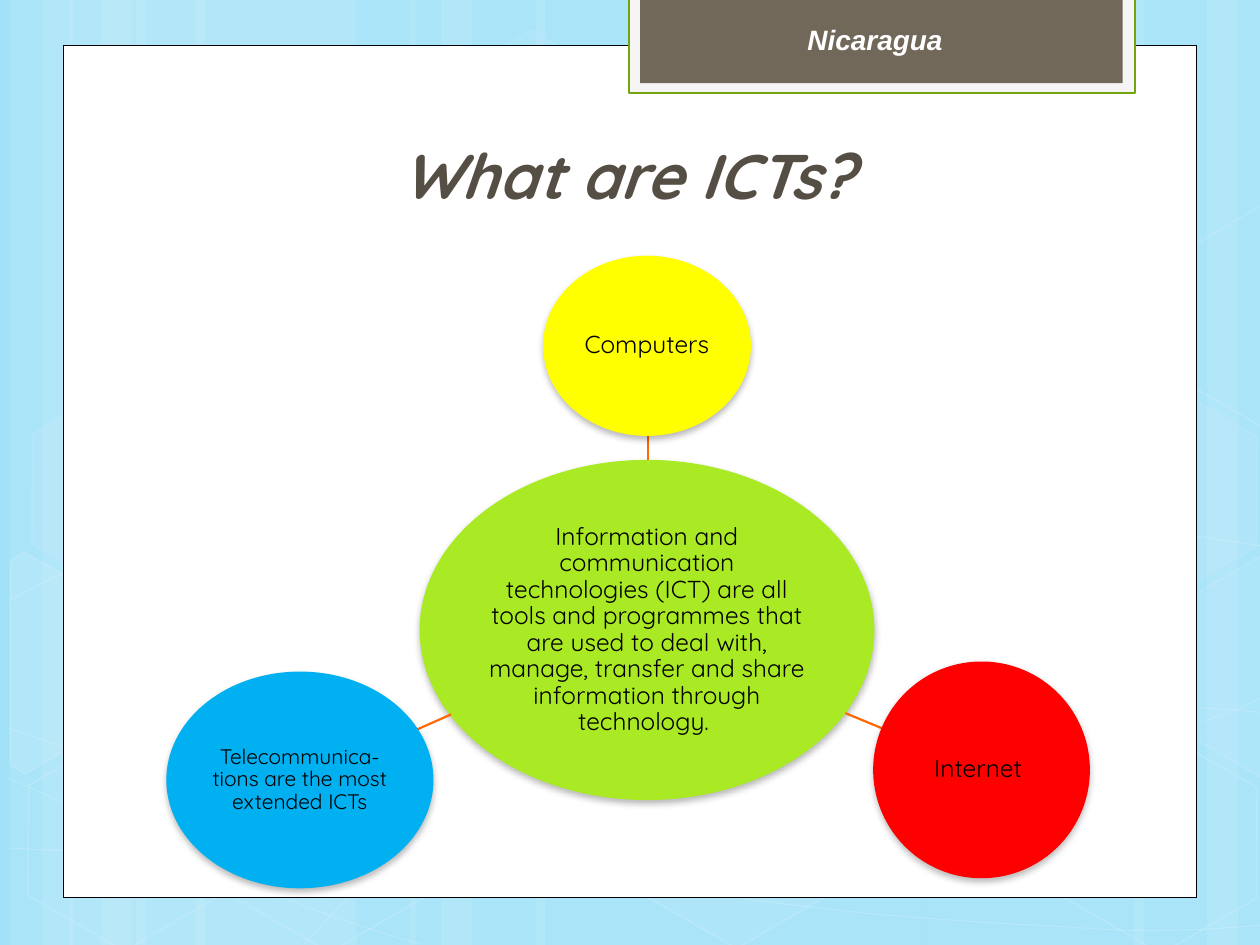
from dataclasses import dataclass
from math import cos, radians, sin

from lxml import etree
from pptx import Presentation
from pptx.dml.color import RGBColor
from pptx.enum.shapes import MSO_CONNECTOR, MSO_SHAPE
from pptx.enum.text import MSO_ANCHOR, MSO_AUTO_SIZE, PP_ALIGN
from pptx.oxml.ns import qn
from pptx.util import Inches, Pt

RECT, OVAL, HEXAGON = MSO_SHAPE.RECTANGLE, MSO_SHAPE.OVAL, MSO_SHAPE.HEXAGON
STRAIGHT = MSO_CONNECTOR.STRAIGHT
CENTER = PP_ALIGN.CENTER
MIDDLE, BOTTOM = MSO_ANCHOR.MIDDLE, MSO_ANCHOR.BOTTOM
NO_AUTOFIT = MSO_AUTO_SIZE.NONE
TITLE_ONLY = 5
TILT = 30


@dataclass(frozen=True)
class Theme:
    sky: str = "A1E2F9"
    white: str = "FFFFFF"
    black: str = "000000"
    tab_frame: str = "F5F5F5"
    tab_border: str = "74A510"
    tab: str = "71685A"
    title: str = "554E44"
    spoke: str = "FF6700"
    lime: str = "AAEA25"
    yellow: str = "FFFF00"
    red: str = "FF0000"
    blue: str = "00B0F0"
    body_font: str = "Quicksand"
    label_font: str = "Arial"
    title_size: int = 36
    label_size: int = 16
    body_size: int = 14
    small_size: int = 12


THEME = Theme()

BANDS = [(1.08, 1.75), (0.08, 0.5), (0.33, 0.83), (1.55, 1.75), (0.55, 0.5), (0.8, 0.83),
         (7.33, 1.75), (9.58, 0.5), (9, 0.83), (4.25, 3.08), (3.25, 0.5), (3.5, 0.83)]

WAVES = [
    [(0.07, 6.73), (0.61, 6.76), (1.15, 6.79), (1.9, 6.78), (2.65, 6.77), (3.58, 6.75),
     (4.58, 6.65), (5.58, 6.55), (7, 6.36), (7.92, 6.17), (8.83, 5.98), (9.77, 5.68),
     (10.07, 5.51)],
    [(0.07, 4.77), (0.36, 4.61), (0.65, 4.46), (1.21, 4.31), (1.78, 4.16), (2.59, 3.94),
     (3.47, 3.87), (4.36, 3.8), (5.44, 3.79), (6.54, 3.87), (7.64, 3.95), (9.47, 4.26),
     (10.07, 4.34)],
    [(0.06, 6.17), (1.27, 6.72), (2.47, 7.27), (3.34, 7.49)],
    [(0.07, 5.78), (0.38, 5.89), (0.7, 6), (1.28, 6.16), (1.86, 6.31), (2.73, 6.56),
     (3.57, 6.73), (4.4, 6.9), (5.45, 7.08), (6.28, 7.18), (7.11, 7.29), (8, 7.33),
     (8.53, 7.36), (9.05, 7.4), (9.19, 7.38), (9.45, 7.38), (9.71, 7.37), (9.89, 7.35),
     (10.07, 7.34)],
    [(2.42, 7.49), (2.6, 7.29), (2.78, 7.09), (3.02, 6.91), (3.26, 6.73), (3.6, 6.53),
     (3.88, 6.39), (4.16, 6.25), (4.33, 6.19), (4.7, 6.09), (5.06, 5.99), (5.73, 5.85),
     (6.08, 5.78), (6.44, 5.71), (6.49, 5.71), (6.8, 5.69), (7.11, 5.66), (7.6, 5.63),
     (7.94, 5.62), (8.29, 5.61), (8.86, 5.62), (8.86, 5.62), (9.08, 5.62), (9.31, 5.62),
     (9.53, 5.62), (9.71, 5.63), (9.88, 5.64), (9.97, 5.65), (10.06, 5.66), (10.03, 5.65),
     (10.06, 5.66)],
]

HEXAGONS = [(3.34, 0.36, 4, 8), (4.97, 5.89, 6, 12), (0.11, 5.91, None, 12),
            (0.14, 3.12, 7, 8), (1.74, 5.92, None, 12), (7.53, 4.53, 10, 12),
            (8.34, 5.93, None, 12), (8.34, 3.14, 7, 8)]

CUT_HEXAGONS = [
    ([(0.08, 4.45), (0.19, 4.38), (0.96, 4.82), (0.95, 5.7), (0.2, 6.14), (0.08, 6.07)],
     (0.36, 5.35), 10),
    ([(9.26, 4.85), (10.01, 4.41), (10.09, 4.46), (10.09, 6.13), (10.02, 6.17), (9.26, 5.73)],
     (9.85, 5.2), 4),
    ([(9.26, 2.07), (10.01, 1.63), (10.1, 1.68), (10.09, 3.35), (10.02, 3.39), (9.26, 2.95)],
     (9.85, 2.41), None),
]

HUB_TEXT = ("Information and communication technologies (ICT) are all tools and programmes "
            "that are used to deal with, manage, transfer and share information through technology. ")


def rgb(color):
    return RGBColor.from_string(color)


def set_opacity(shape, percent):
    newest_color = list(shape.element.iter(qn("a:srgbClr")))[-1]
    etree.SubElement(newest_color, qn("a:alpha"), val=str(percent * 1000))


def paint(shape, fill=None, fill_opacity=100, line=None, width=1, line_opacity=100):
    shape.shadow.inherit = False
    if fill:
        shape.fill.solid()
        shape.fill.fore_color.rgb = rgb(fill)
        if fill_opacity < 100:
            set_opacity(shape, fill_opacity)
    else:
        shape.fill.background()
    if line:
        shape.line.color.rgb = rgb(line)
        shape.line.width = Pt(width)
        if line_opacity < 100:
            set_opacity(shape, line_opacity)
    else:
        shape.line.fill.background()


def glass(opacity):
    return {"fill": THEME.white, "fill_opacity": opacity} if opacity else {}


def add_block(slide, kind, box, **look):
    block = slide.shapes.add_shape(kind, *map(Inches, box))
    paint(block, **look)
    return block


def add_outline(slide, points, close, **look):
    corners = [(Inches(x), Inches(y)) for x, y in points]
    builder = slide.shapes.build_freeform(*corners[0])
    builder.add_line_segments(corners[1:], close=close)
    outline = builder.convert_to_shape()
    paint(outline, **look)
    return outline


def add_wave(slide, points):
    wave = add_outline(slide, points, False, line=THEME.white, width=0.5, line_opacity=20)
    route = next(wave.element.iter(qn("a:path")))
    steps = route.findall(qn("a:lnTo"))
    for first in range(0, len(steps), 3):
        curve = etree.SubElement(route, qn("a:cubicBezTo"))
        for step in steps[first:first + 3]:
            curve.append(step[0])
            route.remove(step)


def turn_back(point, center):
    angle = radians(-TILT)
    dx, dy = point[0] - center[0], point[1] - center[1]
    return (center[0] + dx * cos(angle) - dy * sin(angle),
            center[1] + dx * sin(angle) + dy * cos(angle))


def write(frame, text, size, color, font, strong=False, anchor=None):
    frame.word_wrap = True
    if anchor is not None:
        frame.vertical_anchor = anchor
    paragraph = frame.paragraphs[0]
    paragraph.alignment = CENTER
    run = paragraph.add_run()
    run.text = text
    run.font.size = Pt(size)
    run.font.name = font
    run.font.bold = run.font.italic = strong
    run.font.color.rgb = rgb(color)
    return paragraph


def add_backdrop(slide):
    slide.background.fill.solid()
    slide.background.fill.fore_color.rgb = rgb(THEME.sky)
    for left, width in BANDS:
        add_block(slide, RECT, (left, 0, width, 7.5), **glass(10))
    for wave in WAVES:
        add_wave(slide, wave)
    for left, top, opacity, edge in HEXAGONS:
        hexagon = add_block(slide, HEXAGON, (left, top, 1.75, 1.52),
                            line=THEME.white, line_opacity=edge, **glass(opacity))
        hexagon.rotation = TILT
        hexagon.adjustments[0], hexagon.adjustments[1] = 0.285, 1.155
    for corners, center, opacity in CUT_HEXAGONS:
        upright = [turn_back(corner, center) for corner in corners]
        cut = add_outline(slide, upright, True, line=THEME.white, line_opacity=12, **glass(opacity))
        cut.rotation = TILT


def add_panel(slide):
    add_block(slide, RECT, (0.5, 0.36, 9, 6.76), fill=THEME.white, line=THEME.black, width=0.5)
    add_block(slide, RECT, (4.99, -0.02, 4.02, 0.76), fill=THEME.tab_frame,
              line=THEME.tab_border, width=1.25)
    add_block(slide, RECT, (5.08, -0.02, 3.83, 0.68), fill=THEME.tab)


def add_title(slide, text):
    title = slide.shapes.title
    title.left, title.top, title.width, title.height = map(Inches, (1.14, 0.99, 7.68, 0.74))
    title.text_frame.auto_size = NO_AUTOFIT
    write(title.text_frame, text, THEME.title_size, THEME.title, THEME.body_font, True, BOTTOM)
    title.element.getparent().append(title.element)


def add_bubble(slide, box, color, text, size=THEME.body_size):
    bubble = add_block(slide, OVAL, box, fill=color)
    effects = bubble.element.spPr.find(qn("a:effectLst"))
    shadow = etree.SubElement(effects, qn("a:outerShdw"), blurRad=str(Pt(4)), dist=str(Pt(2)),
                              dir="5400000", rotWithShape="0")
    shade = etree.SubElement(shadow, qn("a:srgbClr"), val=THEME.black)
    etree.SubElement(shade, qn("a:alpha"), val="28000")
    frame = bubble.text_frame
    frame.margin_left = frame.margin_right = frame.margin_top = frame.margin_bottom = Inches(0.01)
    paragraph = write(frame, text, size, THEME.black, THEME.body_font, anchor=MIDDLE)
    paragraph.line_spacing = 0.9


def add_spoke(slide, ends):
    spoke = slide.shapes.add_connector(STRAIGHT, *map(Inches, ends))
    spoke.line.color.rgb = rgb(THEME.spoke)
    spoke.line.width = Pt(1.25)
    etree.SubElement(spoke.element.spPr, qn("a:effectLst"))


def add_country_label(slide, country):
    label = slide.shapes.add_textbox(*map(Inches, (5.31, 0.13, 3.27, 0.37)))
    write(label.text_frame, country, THEME.label_size, THEME.white, THEME.label_font, True)


def main():
    deck = Presentation()
    deck.slide_width, deck.slide_height = Inches(10), Inches(7.5)
    slide = deck.slides.add_slide(deck.slide_layouts[TITLE_ONLY])
    add_backdrop(slide)
    add_panel(slide)
    add_title(slide, "What are ICTs?")
    add_bubble(slide, (3.33, 3.65, 3.61, 2.7), THEME.lime, HUB_TEXT)
    add_spoke(slide, (5.14, 3.65, 5.14, 3.46))
    add_bubble(slide, (4.31, 2.03, 1.65, 1.43), THEME.yellow, "Computers")
    add_spoke(slide, (6.71, 5.66, 7, 5.78))
    add_bubble(slide, (6.93, 5.25, 1.72, 1.72), THEME.red, "Internet ")
    add_spoke(slide, (3.58, 5.67, 3.31, 5.79))
    add_bubble(slide, (1.32, 5.33, 2.12, 1.72), THEME.blue,
               "Telecommunica-tions are the most extended ICTs", THEME.small_size)
    add_country_label(slide, "Nicaragua")
    deck.save("out.pptx")


if __name__ == "__main__":
    main()
